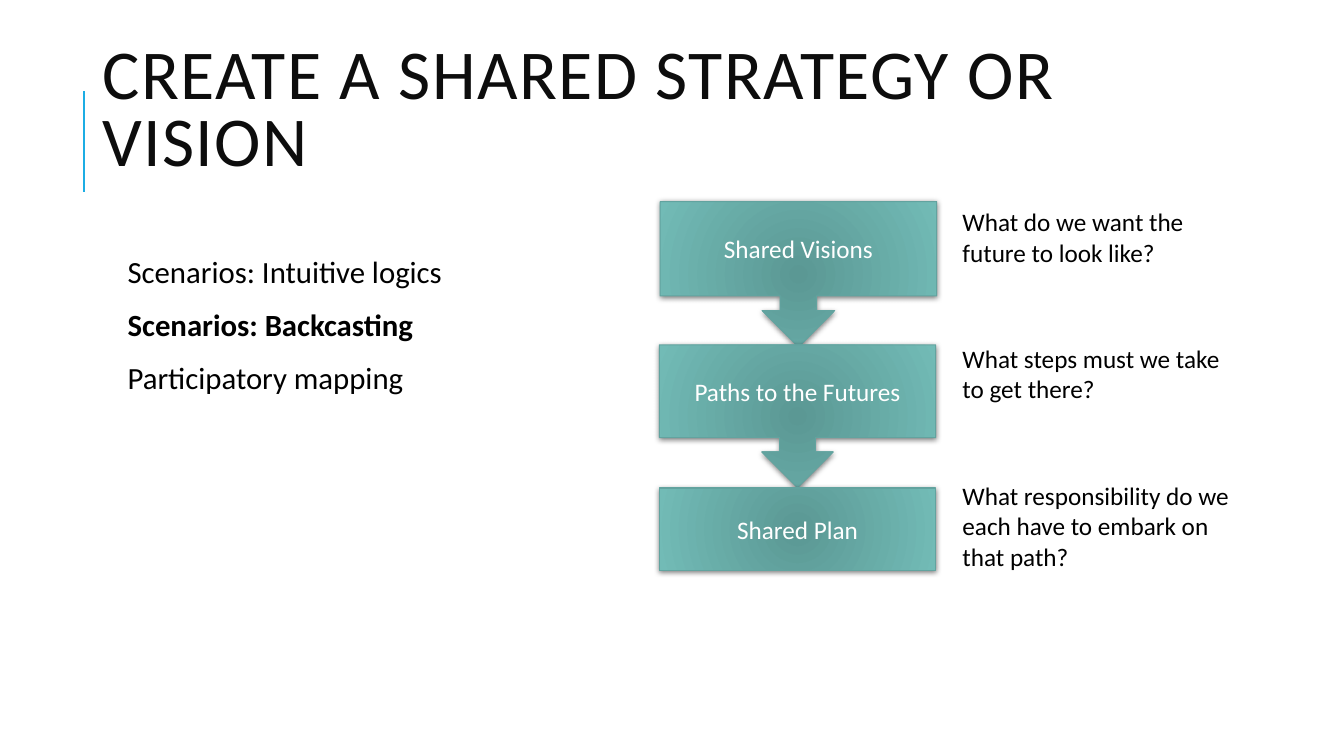
"""Build the slide on creating a shared strategy or vision."""
from dataclasses import dataclass

from lxml.etree import SubElement
from pptx import Presentation
from pptx.dml.color import RGBColor
from pptx.enum.shapes import MSO_CONNECTOR, MSO_SHAPE
from pptx.enum.text import MSO_ANCHOR, MSO_AUTO_SIZE, PP_ALIGN
from pptx.oxml.ns import qn
from pptx.util import Inches, Pt

SLIDE_WIDTH, SLIDE_HEIGHT = Inches(13.333), Inches(7.5)
COLUMNS, ROWS = 160, 90
FONT = "Calibri"
COLORS = {
    "accent": "1CADE4",
    "title": "0D0D0D",
    "text": "000000",
    "label": "FFFFFF",
    "box_center": "5B9894",
    "box_edge": "72BBB6",
    "box_line": "62A39F",
    "shadow": "000000",
}
QUESTION_LEFT, QUESTION_WIDTH = 113.4, 35.6
QUESTION_TOP, QUESTION_PITCH = 24, 16.3
STEP_TOP, STEP_PITCH, STEP_WIDTH = 24, 17.05, 32.9


@dataclass
class Step:
    """One box of the flow and the question beside it."""
    label: str
    question: str
    kind: MSO_SHAPE
    left: float
    height: float
    question_height: float


STEPS = [
    Step("Shared Visions", "What do we want the future to look like?",
         MSO_SHAPE.DOWN_ARROW_CALLOUT, 78.6, 17.3, 8.5),
    Step("Paths to the Futures", "What steps must we take to get there?",
         MSO_SHAPE.DOWN_ARROW_CALLOUT, 78.5, 17, 8.5),
    Step("Shared Plan", "What responsibility do we each have to embark on that path?",
         MSO_SHAPE.RECTANGLE, 78.5, 9.8, 12.1),
]
METHODS = [
    ("Scenarios: Intuitive logics", False),
    ("Scenarios: Backcasting", True),
    ("Participatory mapping", False),
]


def column(count: float) -> int:
    """Return the length of a number of grid columns."""
    return round(SLIDE_WIDTH * count / COLUMNS)


def row(count: float) -> int:
    """Return the length of a number of grid rows."""
    return round(SLIDE_HEIGHT * count / ROWS)


def area(left: float, top: float, width: float, height: float) -> tuple:
    """Turn grid units into a position and a size."""
    return column(left), row(top), column(width), row(height)


def color(name: str) -> RGBColor:
    """Look up a named colour."""
    return RGBColor.from_string(COLORS[name])


def write(paragraph, text: str, *, size: float = 18, ink: str = "text",
          bold: bool = False, align=PP_ALIGN.LEFT, line_spacing: float = 1,
          before: float = 0, after: float = 0, tracking: float = 0) -> None:
    """Write formatted text into a paragraph."""
    paragraph.alignment = align
    paragraph.line_spacing = line_spacing
    paragraph.space_before, paragraph.space_after = Pt(before), Pt(after)
    run = paragraph.add_run()
    run.text = text
    run.font.name, run.font.size, run.font.bold = FONT, Pt(size), bold
    run.font.color.rgb = color(ink)
    if tracking:
        run.font._element.set("spc", str(round(tracking * 100)))


def add_text_frame(slide, *position: float):
    """Add a wrapping text box and return its text frame."""
    text_frame = slide.shapes.add_textbox(*area(*position)).text_frame
    text_frame.word_wrap = True
    return text_frame


def add_title(slide) -> None:
    """Place the title and the accent line at its left."""
    title = slide.shapes.title
    title.left, title.top, title.width, title.height = area(11, 4.7, 138, 17.4)
    title.text_frame.auto_size = MSO_AUTO_SIZE.NONE
    title.text_frame.vertical_anchor = MSO_ANCHOR.MIDDLE
    write(title.text_frame.paragraphs[0], "CREATE A SHARED STRATEGY OR VISION",
          size=50, ink="title", line_spacing=0.8, tracking=1)
    line = slide.shapes.add_connector(
        MSO_CONNECTOR.STRAIGHT, column(10), row(22.8), column(10), row(10.8))
    line.line.color.rgb = color("accent")
    line.line.width = Pt(1.5)
    SubElement(line._element.spPr, qn("a:effectLst"))


def add_methods(slide) -> None:
    """List the methods at the left."""
    text_frame = add_text_frame(slide, 13.4, 30, 127.6, 52.8)
    text_frame.margin_left = column(1.8)
    text_frame.margin_top = text_frame.margin_bottom = text_frame.margin_right = row(0.6)
    for index, (text, bold) in enumerate(METHODS):
        paragraph = text_frame.add_paragraph() if index else text_frame.paragraphs[0]
        write(paragraph, text, size=22, bold=bold, line_spacing=0.9, before=12, after=2)


def add_radial_fill(shape) -> None:
    """Fill a shape with a gradient that spreads from its centre."""
    shape.fill.gradient()
    for stop, name in zip(shape.fill.gradient_stops, ("box_center", "box_edge")):
        stop.color.rgb = color(name)
    gradient = shape._element.spPr.find(qn("a:gradFill"))
    gradient.remove(gradient.find(qn("a:lin")))
    circle = SubElement(gradient, qn("a:path"), {"path": "circle"})
    SubElement(circle, qn("a:fillToRect"), dict.fromkeys("ltrb", "100000"))


def add_soft_shadow(shape) -> None:
    """Give a shape a soft shadow just below it."""
    shape.shadow.inherit = False
    effects = shape._element.spPr.find(qn("a:effectLst"))
    shadow = SubElement(effects, qn("a:outerShdw"), {
        "blurRad": str(Pt(4)), "dist": str(Pt(1)), "dir": "5400000", "rotWithShape": "0"})
    tint = SubElement(shadow, qn("a:srgbClr"), {"val": COLORS["shadow"]})
    SubElement(tint, qn("a:alpha"), {"val": "50000"})


def add_step(slide, index: int, step: Step) -> None:
    """Draw one box of the flow with its question."""
    shape = slide.shapes.add_shape(step.kind, *area(
        step.left, STEP_TOP + index * STEP_PITCH, STEP_WIDTH, step.height))
    add_radial_fill(shape)
    shape.line.color.rgb = color("box_line")
    shape.line.width = Pt(0.75)
    add_soft_shadow(shape)
    shape.text_frame.word_wrap = True
    shape.text_frame.vertical_anchor = MSO_ANCHOR.MIDDLE
    write(shape.text_frame.paragraphs[0], step.label, ink="label", align=PP_ALIGN.CENTER)
    question = add_text_frame(slide, QUESTION_LEFT, QUESTION_TOP + index * QUESTION_PITCH,
                              QUESTION_WIDTH, step.question_height)
    question.auto_size = MSO_AUTO_SIZE.SHAPE_TO_FIT_TEXT
    write(question.paragraphs[0], step.question)


def main() -> None:
    """Build and save the presentation."""
    presentation = Presentation()
    presentation.slide_width, presentation.slide_height = SLIDE_WIDTH, SLIDE_HEIGHT
    slide = presentation.slides.add_slide(presentation.slide_layouts.get_by_name("Title Only"))
    add_title(slide)
    add_methods(slide)
    for index, step in enumerate(STEPS):
        add_step(slide, index, step)
    presentation.save("out.pptx")


if __name__ == "__main__":
    main()
